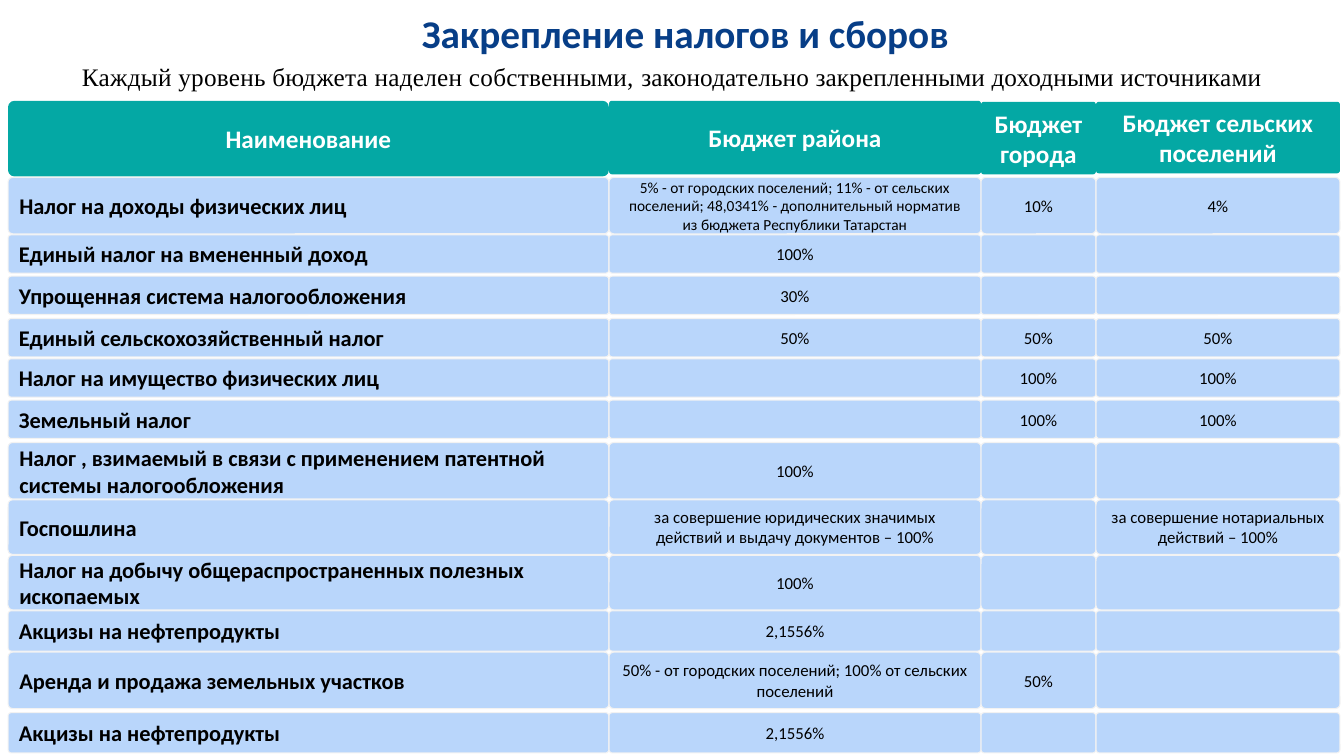
"""Builds a slide that assigns taxes and fees to budget levels."""
import pptx
import pptx.dml.color
import pptx.enum.shapes
import pptx.enum.text
import pptx.util

Inches = pptx.util.Inches
Pt = pptx.util.Pt
Align = pptx.enum.text.PP_ALIGN
Anchor = pptx.enum.text.MSO_ANCHOR

COLORS = {
    "title": "073E87",
    "header": "04A8A4",
    "cell": "B9D6FB",
    "border": "F2F2F2",
    "white": "FFFFFF",
    "black": "000000",
}

FORMATS = {
    "title": {"size": Pt(28), "name": "Calibri", "bold": True},
    "subtitle": {"size": Pt(18), "name": "Times New Roman"},
    "header": {"size": Pt(18), "name": "Calibri", "bold": True},
    "tax": {"size": Pt(16), "name": "Calibri", "bold": True},
    "share": {"size": Pt(12), "name": "Calibri"},
    "small": {"size": Pt(11), "name": "Calibri"},
}

SUBTITLE = [
    ("Каждый уровень бюджета наделен собственными, ", 20),
    ("законодательно закрепленными доходными источниками", 10),
]

COLUMNS = [
    ("Наименование", 0.08, 5.96, 1.0, 0.75, 0.083),
    ("Бюджет района", 6.04, 3.69, 1.0, 0.73, 0.04),
    ("Бюджет города", 9.73, 1.14, 1.01, 0.72, 0.04),
    ("Бюджет сельских поселений", 10.87, 2.42, 1.01, 0.71, 0.04),
]

ROWS = [
    (1.76, 0.56, ["Налог на доходы физических лиц",
                  "5% - от городских поселений; 11% - от сельских поселений; "
                  "48,0341% - дополнительный норматив из бюджета Республики Татарстан",
                  "10%", "4%"]),
    (2.33, 0.38, ["Единый налог на вмененный доход", "100%", "", ""]),
    (2.74, 0.38, ["Упрощенная система налогообложения", "30%", "", ""]),
    (3.16, 0.38, ["Единый сельскохозяйственный налог", "50%", "50%", "50%"]),
    (3.56, 0.38, ["Налог на имущество физических лиц", "", "100%", "100%"]),
    (3.97, 0.38, ["Земельный налог", "", "100%", "100%"]),
    (4.39, 0.56, ["Налог , взимаемый в связи с применением патентной "
                  "системы налогообложения", "100%", "", ""]),
    (4.96, 0.54, ["Госпошлина",
                  "за совершение юридических значимых действий "
                  "и выдачу документов – 100%",
                  "", "за совершение нотариальных действий – 100%"]),
    (5.51, 0.54, ["Налог на добычу общераспространенных полезных ископаемых",
                  "100%", "", ""]),
    (6.06, 0.4, ["Акцизы на нефтепродукты", "2,1556%", "", ""]),
    (6.47, 0.56, ["Аренда и продажа земельных участков",
                  "50% - от городских поселений; 100% от сельских поселений",
                  "50%", ""]),
    (7.07, 0.4, ["Акцизы на нефтепродукты", "2,1556%", "", ""]),
]


def rgb(color):
    """Return the named colour."""
    return pptx.dml.color.RGBColor.from_string(COLORS[color])


def add_span(para, text, style, color):
    """Add one formatted run to a paragraph."""
    span = para.add_run()
    span.text = text
    for key, value in FORMATS[style].items():
        setattr(span.font, key, value)
    span.font.color.rgb = rgb(color)
    return span


def add_heading(page, place, spans, style, color, wrap):
    """Add a centred line of text whose runs have their own letter spacing."""
    box = page.shapes.add_textbox(*map(Inches, place))
    box.text_frame.word_wrap = wrap
    para = box.text_frame.paragraphs[0]
    para.alignment = Align.CENTER
    for text, spacing in spans:
        span = add_span(para, text, style, color)
        if spacing:
            span.font._element.set("spc", str(spacing))


def add_cell(page, place, text, style, fill, color, rounding=0.083,
             align=Align.CENTER, border=None):
    """Add a rounded cell with optional border and text."""
    cell = page.shapes.add_shape(
        pptx.enum.shapes.MSO_SHAPE.ROUNDED_RECTANGLE, *map(Inches, place))
    cell.shadow.inherit = False
    cell.adjustments[0] = rounding
    cell.fill.solid()
    cell.fill.fore_color.rgb = rgb(fill)
    if border:
        cell.line.color.rgb = rgb(border)
        cell.line.width = Pt(0.75)
    else:
        cell.line.fill.background()
    if text:
        cell.text_frame.word_wrap = True
        cell.text_frame.vertical_anchor = Anchor.MIDDLE
        para = cell.text_frame.paragraphs[0]
        para.alignment = align
        add_span(para, text, style, color)


def add_headers(page):
    """Add the header cell of every column."""
    for name, left, width, top, height, rounding in COLUMNS:
        add_cell(page, (left, top, width, height), name, "header", "header",
                 "white", rounding)


def add_row(page, top, height, texts):
    """Add one tax with its share in every budget."""
    for index, (column, text) in enumerate(zip(COLUMNS, texts)):
        is_tax = index == 0
        style = "tax" if is_tax else "small" if len(text) > 100 else "share"
        add_cell(page, (column[1], top, column[2], height), text, style,
                 "cell", "black", border="border",
                 align=Align.LEFT if is_tax else Align.CENTER)


def main():
    """Build and save the deck."""
    deck = pptx.Presentation()
    deck.slide_width = Inches(13.33)
    deck.slide_height = Inches(7.5)
    page = deck.slides.add_slide(deck.slide_layouts[6])
    add_heading(page, (4.05, 0.04, 5.49, 0.57),
                [("Закрепление налогов и сборов", 0)], "title", "title", False)
    add_heading(page, (0.29, 0.56, 12.75, 0.4), SUBTITLE, "subtitle", "black", True)
    add_headers(page)
    for top, height, texts in ROWS:
        add_row(page, top, height, texts)
    deck.save("out.pptx")


if __name__ == "__main__":
    main()
